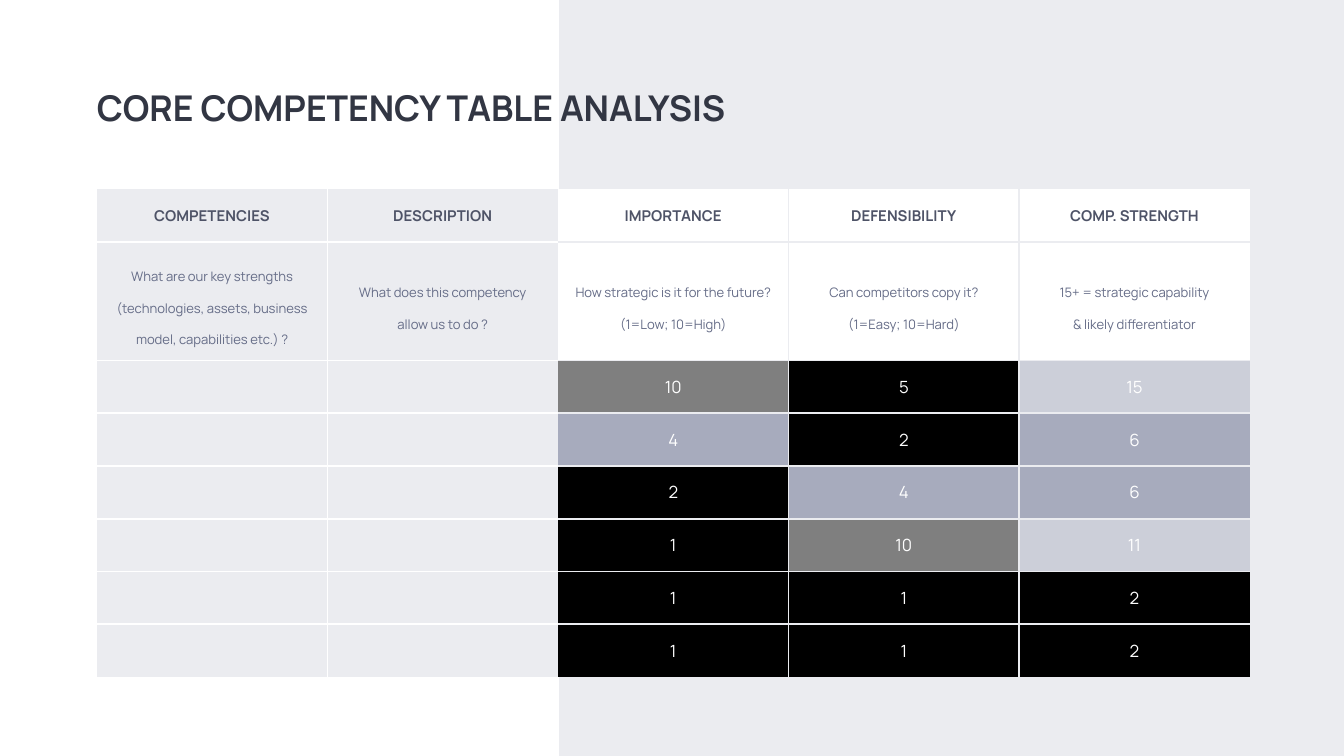
from dataclasses import dataclass

from lxml import etree
from pptx import Presentation
from pptx.dml.color import RGBColor
from pptx.enum.shapes import MSO_SHAPE
from pptx.enum.text import MSO_ANCHOR, PP_ALIGN
from pptx.oxml.ns import qn
from pptx.util import Inches, Pt

RECTANGLE = MSO_SHAPE.RECTANGLE
TOP, MIDDLE = MSO_ANCHOR.TOP, MSO_ANCHOR.MIDDLE
LEFT, CENTER = PP_ALIGN.LEFT, PP_ALIGN.CENTER
TITLE_ONLY = 5


@dataclass(frozen=True)
class Theme:
    font: str = "Manrope"
    white: str = "FFFFFF"
    mist: str = "EBECF0"
    pale: str = "CCCFD9"
    lavender: str = "A7ABBD"
    grey: str = "7F7F7F"
    black: str = "000000"
    title: str = "323643"
    heading: str = "4E5367"
    question: str = "656C87"
    title_size: int = 19
    heading_size: int = 8
    question_size: int = 7
    score_size: int = 9


THEME = Theme()

HEADINGS = ["COMPETENCIES", "DESCRIPTION", "IMPORTANCE", "DEFENSIBILITY", "COMP. STRENGTH"]
QUESTIONS = [
    "What are our key strengths (technologies, assets, business model, capabilities etc.) ?",
    "What does this competency\nallow us to do ?",
    "How strategic is it for the future?\n(1=Low; 10=High)",
    "Can competitors copy it?\n(1=Easy; 10=Hard)",
    "15+ = strategic capability\n& likely differentiator",
]
SCORES = [(10, 5, 15), (4, 2, 6), (2, 4, 6), (1, 10, 11), (1, 1, 2), (1, 1, 2)]
SCORE_FILLS = {
    4: THEME.lavender, 6: THEME.lavender, 10: THEME.grey,
    11: THEME.pale, 15: THEME.pale,
}  # every other score is black
ROWS = [HEADINGS, QUESTIONS] + [("", "", *scores) for scores in SCORES]
FIRST_SCORE_ROW, FIRST_SCORE_COLUMN = 2, 2
LAST_ROW, LAST_COLUMN = len(ROWS) - 1, len(HEADINGS) - 1
TABLE_HEIGHT, QUESTION_HEIGHT = Inches(3.63), Inches(0.88)


def write(frame, text, size, color, bold, align, spacing):
    frame.text = text
    for para in frame.paragraphs:
        para.alignment = align
        para.line_spacing = spacing
        for span in para.runs:
            span.font.name = THEME.font
            span.font.size = Pt(size)
            span.font.bold = bold
            span.font.color.rgb = RGBColor.from_string(color)


def set_border(cell, side, color):
    """Draw a 1 pt border on side L, R, T or B; a color of None leaves it open."""
    properties = cell._tc.get_or_add_tcPr()
    line = etree.SubElement(properties, qn(f"a:ln{side}"), w=str(Pt(1)))
    if color is None:
        etree.SubElement(line, qn("a:noFill"))
    else:
        fill = etree.SubElement(line, qn("a:solidFill"))
        etree.SubElement(fill, qn("a:srgbClr"), val=color)


deck = Presentation()
deck.slide_width = Inches(10)
deck.slide_height = deck.slide_width * 9 // 16
page = deck.slides.add_slide(deck.slide_layouts[TITLE_ONLY])
page.background.fill.solid()
page.background.fill.fore_color.rgb = RGBColor.from_string(THEME.mist)

# Title, in front of the white panel
title = page.shapes.title
title.left, title.top = Inches(0.72), Inches(0.48)
title.width, title.height = Inches(5.07), Inches(0.32)
frame = title.text_frame
frame.margin_left = frame.margin_right = frame.margin_top = frame.margin_bottom = 0
frame.vertical_anchor = TOP
frame.word_wrap = True
write(frame, "CORE COMPETENCY TABLE ANALYSIS", THEME.title_size, THEME.title, True, LEFT, 1.5)

panel = page.shapes.add_shape(RECTANGLE, 0, 0, Inches(4.16), deck.slide_height)
panel.shadow.inherit = False
panel.fill.solid()
panel.fill.fore_color.rgb = RGBColor.from_string(THEME.white)
panel.line.fill.background()
title.element.addprevious(panel.element)

# Competency table
table = page.shapes.add_table(
    len(ROWS), len(HEADINGS), Inches(0.72), Inches(1.41), Inches(8.58), TABLE_HEIGHT
).table
table.first_row = table.horz_banding = False
for row in table.rows:
    row.height = (TABLE_HEIGHT - QUESTION_HEIGHT) // LAST_ROW
table.rows[1].height = QUESTION_HEIGHT

for row, values in enumerate(ROWS):
    for column, value in enumerate(values):
        cell = table.cell(row, column)
        cell.margin_left = cell.margin_right = Inches(0.08)
        cell.margin_top = cell.margin_bottom = Inches(0.04)
        cell.vertical_anchor = MIDDLE

        # The outer edges and the seam before the score columns stay open
        scored = column >= FIRST_SCORE_COLUMN
        grid = THEME.mist if scored else THEME.white
        set_border(cell, "L", None if column in (0, FIRST_SCORE_COLUMN) else grid)
        set_border(cell, "R", None if column in (FIRST_SCORE_COLUMN - 1, LAST_COLUMN) else grid)
        set_border(cell, "T", None if row == 0 else grid)
        set_border(cell, "B", None if row == LAST_ROW else grid)

        if row == 0:
            style = THEME.heading_size, THEME.heading, True, CENTER, 1.0
        elif row == 1:
            style = THEME.question_size, THEME.question, False, CENTER, 1.78
        else:
            style = THEME.score_size, THEME.white, False, CENTER, 1.0
        if value:
            write(cell.text_frame, str(value), *style)

        if not scored:
            fill = THEME.mist
        elif row < FIRST_SCORE_ROW:
            fill = THEME.white
        else:
            fill = SCORE_FILLS.get(value, THEME.black)
        cell.fill.solid()
        cell.fill.fore_color.rgb = RGBColor.from_string(fill)

deck.save("out.pptx")
